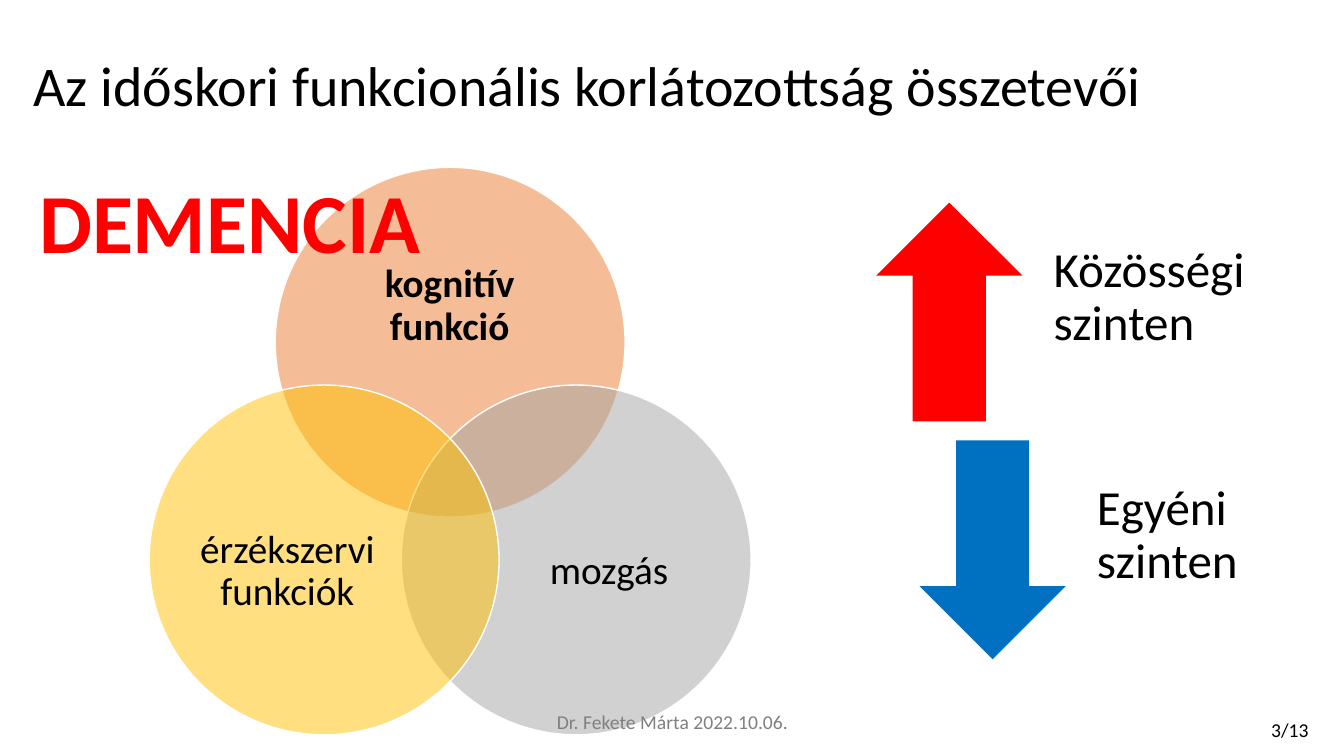
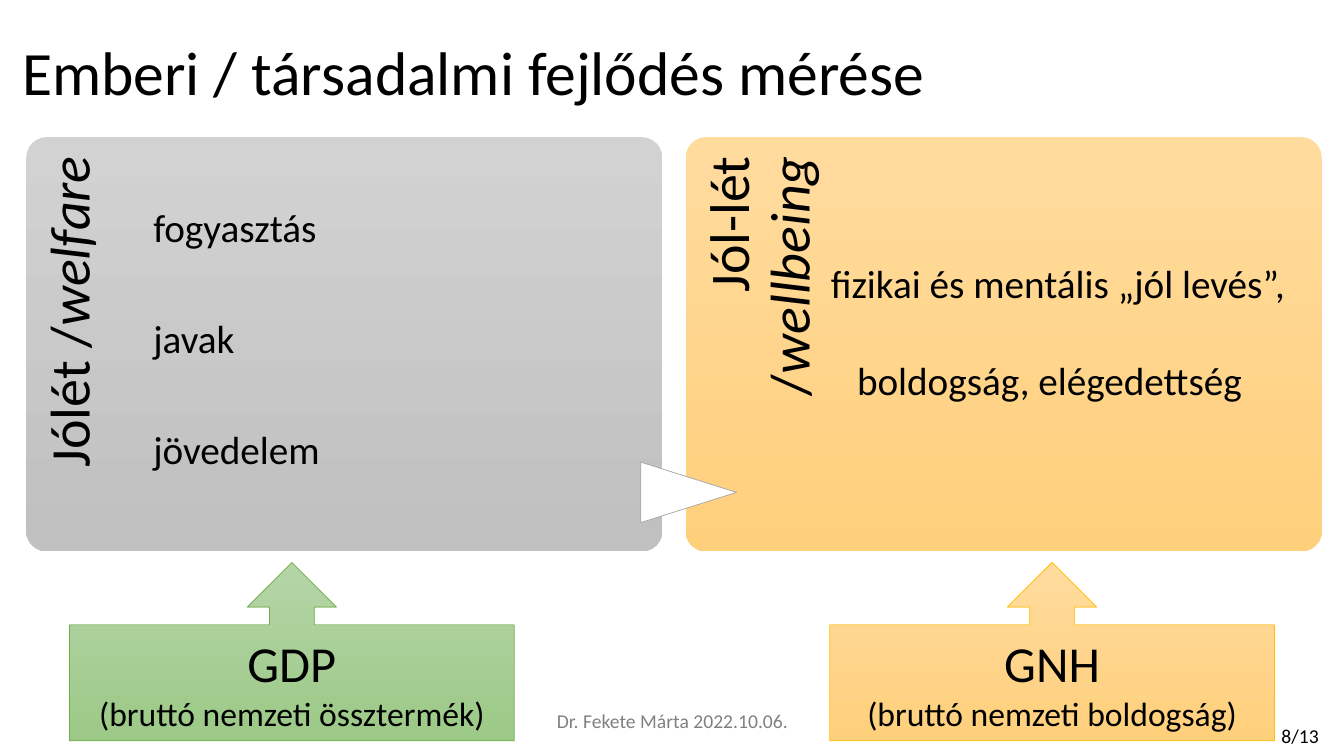
from pptx import Presentation, util as u
from pptx.dml.color import RGBColor
from pptx.enum import shapes, text
from pptx.oxml.ns import qn
from lxml import etree

Inches, Pt = u.Inches, u.Pt
KIND = shapes.MSO_SHAPE
ALIGN = text.PP_ALIGN
ANCHOR = text.MSO_ANCHOR

FONT = "Calibri"
BLACK = RGBColor(0x00, 0x00, 0x00)
WHITE = RGBColor(0xFF, 0xFF, 0xFF)
RED = RGBColor(0xFF, 0x00, 0x00)
BLUE = RGBColor(0x00, 0x70, 0xC0)
ORANGE = RGBColor(0xED, 0x7D, 0x31)
GREY = RGBColor(0xA5, 0xA5, 0xA5)
GOLD = RGBColor(0xFF, 0xC0, 0x00)
GREEN = RGBColor(0x70, 0xAD, 0x47)
FOOTER_GREY = RGBColor(0x80, 0x80, 0x80)
GREY_FADE = (RGBColor(0xD2, 0xD2, 0xD2), RGBColor(0xC0, 0xC0, 0xC0))
GOLD_FADE = (RGBColor(0xFF, 0xDB, 0x9E), RGBColor(0xFF, 0xD0, 0x7C))
GREEN_FADE = (RGBColor(0xB5, 0xD5, 0xA7), RGBColor(0x9C, 0xC9, 0x87))

TITLE_ONLY, TWO_CONTENT = 5, 3
FOOTER = "Dr. Fekete Márta 2022.10.06."

FACTORS_TITLE = "Az időskori funkcionális korlátozottság összetevői"
VENN_CENTER, VENN_TOP, VENN_SIZE = 4.465, 1.66, 3.47
VENN = [
    {"offset": (0, 0), "color": ORANGE, "label": "kognitív funkció",
     "box": (3.46, 2.26, 2, 1.56), "bold": True},
    {"offset": (1.25, 2.16), "color": GREY, "label": "mozgás",
     "box": (5, 4.72, 2.08, 1.91), "bold": False},
    {"offset": (-1.25, 2.16), "color": GOLD, "label": "érzékszervi funkciók",
     "box": (1.81, 4.72, 2.08, 1.91), "bold": False},
]
LEVELS = [
    (KIND.UP_ARROW, RED, 8.69, 2.01, "Közösségi szinten"),
    (KIND.DOWN_ARROW, BLUE, 9.12, 4.37, "Egyéni szinten"),
]

MEASURES_TITLE = "Emberi / társadalmi fejlődés mérése"
PANEL_LEFT, PANEL_PITCH, PANEL_TOP = 0.26, 6.54, 1.36
PANEL_WIDTH, PANEL_HEIGHT = 6.31, 4.11
HEADING_WIDTH, HEADING_HEIGHT = 3.37, 1.26
PANELS = [
    {"heading": ("Jólét /", "welfare"), "fade": GREY_FADE,
     "items": ["fogyasztás", "javak", "jövedelem"],
     "box": (1.52, 2.07, 4.7, 3.2), "gap": 49, "indents": (0, 0, 0)},
    {"heading": ("Jól-lét /", "wellbeing"), "fade": GOLD_FADE,
     "items": ["fizikai és mentális „jól levés”,", "boldogság, elégedettség"],
     "box": (8.24, 2.63, 4.8, 2.4), "gap": 39, "indents": (0, 0.26)},
]
CALLOUTS = [
    (0.69, GREEN_FADE, GREEN, "GDP", "(bruttó nemzeti össztermék)"),
    (8.23, GOLD_FADE, GOLD, "GNH", "(bruttó nemzeti boldogság)"),
]


def place(shape, left, top, width, height):
    shape.left, shape.top = Inches(left), Inches(top)
    shape.width, shape.height = Inches(width), Inches(height)


def write(shape, lines, size=28, color=BLACK, bold=False, align=ALIGN.LEFT,
          anchor=ANCHOR.MIDDLE, insets=(0.1, 0.05, 0.1, 0.05), spacing=0.9, gap=0):
    frame = shape.text_frame
    frame.word_wrap = True
    frame.auto_size = text.MSO_AUTO_SIZE.NONE
    frame.vertical_anchor = anchor
    (frame.margin_left, frame.margin_top,
     frame.margin_right, frame.margin_bottom) = map(Inches, insets)
    for index, line in enumerate(lines):
        paragraph = frame.add_paragraph() if index else frame.paragraphs[0]
        paragraph.alignment = align
        paragraph.line_spacing = spacing
        paragraph.space_before = Pt(0)
        paragraph.space_after = Pt(gap)
        runs = [(line, {})] if isinstance(line, str) else line
        for words, override in runs:
            run = paragraph.add_run()
            run.text = words
            run.font.name = FONT
            run.font.size = Pt(override.get("size", size))
            run.font.bold = bold
            run.font.italic = override.get("italic", False)
            run.font.color.rgb = color
    return shape


def add_label(slide, box, lines, **style):
    return write(slide.shapes.add_textbox(*map(Inches, box)), lines, **style)


def add_figure(slide, kind, box, fill, line=None, line_width=0.5, alpha=None):
    shape = slide.shapes.add_shape(kind, *map(Inches, box))
    shape.shadow.inherit = False
    if isinstance(fill, RGBColor):
        shape.fill.solid()
        shape.fill.fore_color.rgb = fill
    else:
        shape.fill.gradient()
        shape.fill.gradient_angle = 270
        for stop, color in zip(shape.fill.gradient_stops, fill):
            stop.color.rgb = color
    if alpha is not None:
        color_element = shape.element.spPr.find(qn("a:solidFill"))[0]
        etree.SubElement(color_element, qn("a:alpha")).set("val", str(alpha * 1000))
    if line is None:
        shape.line.fill.background()
    else:
        shape.line.color.rgb = line
        shape.line.width = Pt(line_width)
    return shape


def start_slide(presentation, layout, title, box, size):
    slide = presentation.slides.add_slide(presentation.slide_layouts[layout])
    place(slide.shapes.title, *box)
    write(slide.shapes.title, [title], size=size)
    return slide


def add_footer(slide, top, page, page_left, page_top):
    add_label(slide, (4.42, top, 4.5, 0.4), [FOOTER], size=14, color=FOOTER_GREY,
              align=ALIGN.CENTER, spacing=1)
    add_label(slide, (page_left, page_top, 0.72, 0.34), [page], size=14,
              anchor=ANCHOR.TOP, spacing=1)


def fill_list(slide, placeholder, panel):
    slide.shapes.element.append(placeholder.element)
    place(placeholder, *panel["box"])
    write(placeholder, panel["items"], anchor=ANCHOR.TOP, insets=(0, 0, 0, 0),
          gap=panel["gap"])
    for paragraph, indent in zip(placeholder.text_frame.paragraphs, panel["indents"]):
        properties = paragraph._p.get_or_add_pPr()
        properties.set("marL", str(Inches(indent)))
        properties.set("indent", "0")
        etree.SubElement(properties, qn("a:buNone"))


def build_factors(presentation):
    slide = start_slide(presentation, TITLE_ONLY, FACTORS_TITLE,
                        (0.23, 0.15, 12.6, 1.45), 40)
    for circle in VENN:
        across, down = circle["offset"]
        box = (VENN_CENTER - VENN_SIZE / 2 + across, VENN_TOP + down,
               VENN_SIZE, VENN_SIZE)
        add_figure(slide, KIND.OVAL, box, circle["color"], WHITE, 1, alpha=50)
        add_label(slide, circle["box"], [circle["label"]], bold=circle["bold"],
                  align=ALIGN.CENTER, insets=(0, 0, 0, 0))
    for kind, color, left, top, label in LEVELS:
        add_figure(slide, kind, (left, top, 1.45, 2.17), color)
        add_label(slide, (left + 1.49, top, 2.46, 2.17), [label], size=35,
                  insets=(0.27, 0, 0.27, 0.27))
    add_label(slide, (0.26, 1.63, 4.04, 1.11), ["DEMENCIA"], size=60, color=RED,
              bold=True, align=ALIGN.CENTER, anchor=ANCHOR.TOP, spacing=1)
    add_footer(slide, 6.96, "3/13", 12.51, 7.07)


def build_measures(presentation):
    slide = start_slide(presentation, TWO_CONTENT, MEASURES_TITLE,
                        (0.12, 0.02, 11.5, 1.45), 44)
    bodies = [shape for shape in slide.placeholders
              if shape.placeholder_format.idx in (1, 2)]
    for index, (panel, body) in enumerate(zip(PANELS, bodies)):
        left = PANEL_LEFT + index * PANEL_PITCH
        frame = add_figure(slide, KIND.ROUNDED_RECTANGLE,
                           (left, PANEL_TOP, PANEL_WIDTH, PANEL_HEIGHT), panel["fade"])
        frame.adjustments[0] = 0.05
        plain, slanted = panel["heading"]
        shift = (HEADING_WIDTH - HEADING_HEIGHT) / 2
        heading = add_label(
            slide, (left - shift, PANEL_TOP + shift, HEADING_WIDTH, HEADING_HEIGHT),
            [[(plain, {}), (slanted, {"italic": True})]], size=40, align=ALIGN.RIGHT,
            anchor=ANCHOR.TOP, insets=(0, 0.15, 0.19, 0))
        heading.rotation = 270
        fill_list(slide, body, panel)
    pointer = add_figure(slide, KIND.FLOWCHART_EXTRACT, (6.53, 4.41, 0.6, 0.95),
                         WHITE, GREY)
    pointer.rotation = 90
    for left, fade, line, name, meaning in CALLOUTS:
        callout = add_figure(slide, KIND.UP_ARROW_CALLOUT, (left, 5.58, 4.41, 1.77),
                             fade, line)
        write(callout, [name, [(meaning, {"size": 24})]], size=36,
              align=ALIGN.CENTER, spacing=1)
    add_footer(slide, 6.95, "8/13", 12.61, 7.13)


def main():
    presentation = Presentation()
    presentation.slide_width, presentation.slide_height = Inches(13.33), Inches(7.5)
    build_factors(presentation)
    build_measures(presentation)
    presentation.save("out.pptx")


if __name__ == "__main__":
    main()
